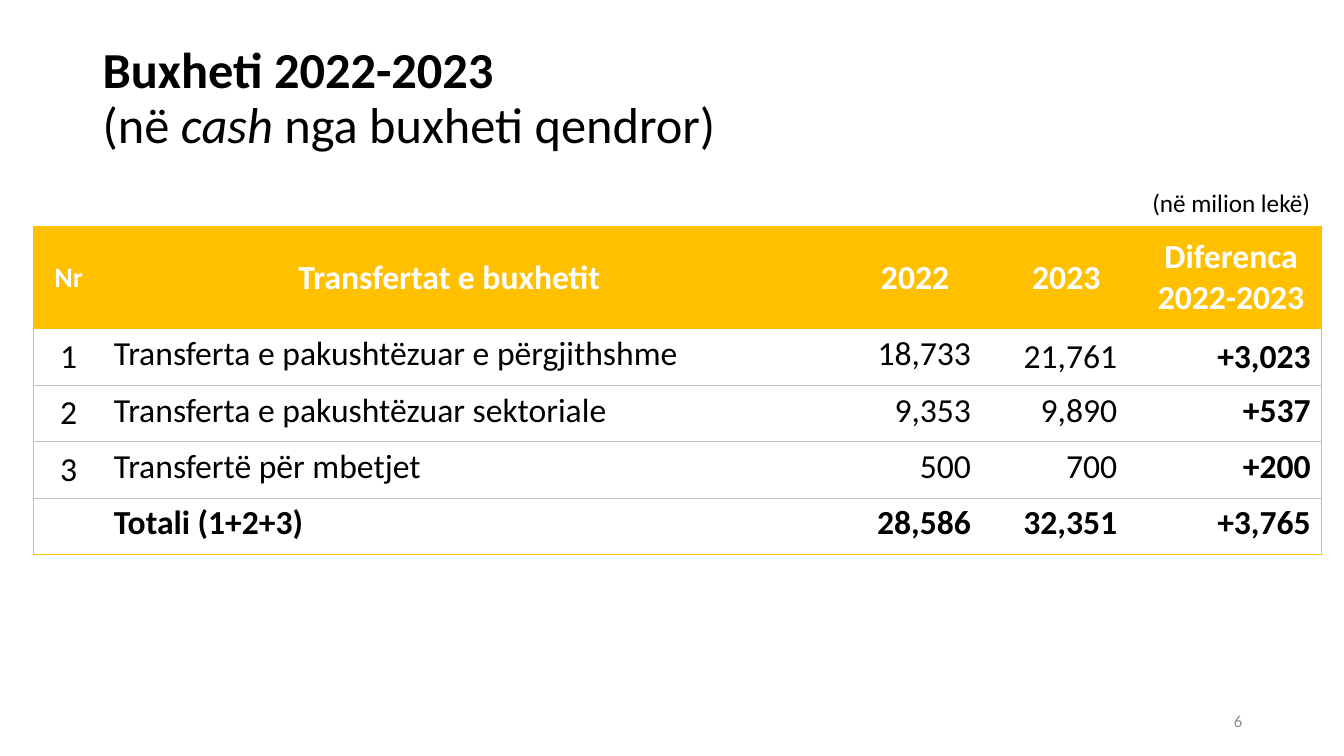
from lxml.etree import SubElement
from pptx import Presentation
from pptx.dml.color import RGBColor
from pptx.enum.text import MSO_ANCHOR, PP_ALIGN
from pptx.oxml.ns import qn
from pptx.util import Inches, Pt

GOLD, GREY, WHITE, BLACK = "FFC000", "BFBFBF", "FFFFFF", "000000"
LEFT, MID, RIGHT = PP_ALIGN.LEFT, PP_ALIGN.CENTER, PP_ALIGN.RIGHT
TOP, CENTER = MSO_ANCHOR.TOP, MSO_ANCHOR.MIDDLE


def tint(code):
    """Turn a hex string into a colour."""
    return RGBColor.from_string(code)


def put(item, values):
    """Set each value of a dict on an object."""
    for name, value in values.items():
        setattr(item, name, value)


class Deck:
    """Holds the style and the slide; lengths are percent of the slide size."""

    def __init__(self, wide, high, face):
        """Open a blank slide of the given size."""
        self.show = Presentation()
        put(self.show, {"slide_width": Inches(wide), "slide_height": Inches(high)})
        self.face = face
        self.slide = self.show.slides.add_slide(self.show.slide_layouts[6])

    def across(self, share):
        """Give a share of the slide width."""
        return round(self.show.slide_width * share / 100)

    def down(self, share):
        """Give a share of the slide height."""
        return round(self.show.slide_height * share / 100)

    def place(self, left, top, width, height):
        """Turn four shares into a position and a size."""
        return self.across(left), self.down(top), self.across(width), self.down(height)

    def letter(self, frame, lines, size, color=BLACK, align=LEFT, bold=False, space=None):
        """Fill a text frame with lines of (text, format) runs."""
        for spot, line in enumerate(lines):
            para = frame.add_paragraph() if spot else frame.paragraphs[0]
            put(para, {"alignment": align, "line_spacing": space})
            for text, extra in line:
                run = para.add_run()
                run.text = text
                look = {"name": self.face, "size": Pt(size), "bold": bold}
                put(run.font, look | extra)
                run.font.color.rgb = tint(color)

    def label(self, area, lines, size, frame=None, **style):
        """Add a text box."""
        box = self.slide.shapes.add_textbox(*self.place(*area)).text_frame
        put(box, {"word_wrap": True, "vertical_anchor": CENTER} | (frame or {}))
        self.letter(box, lines, size, **style)

    def edge(self, cell, sides):
        """Draw the borders of a cell, or clear those without a colour."""
        props = cell._tc.get_or_add_tcPr()
        for side in "LRTB":
            line = SubElement(props, qn(f"a:ln{side}"), w=str(Pt(0.5)))
            color = sides.get(side)
            fill = SubElement(line, qn("a:solidFill" if color else "a:noFill"))
            if color:
                SubElement(fill, qn("a:srgbClr"), val=color)

    def table(self, area, cols, rows):
        """Add a plain table with the given column and row shares."""
        grid = self.slide.shapes.add_table(len(rows), len(cols), *self.place(*area)).table
        put(grid, {"first_row": False, "horz_banding": False})
        for col, share in zip(grid.columns, cols):
            col.width = self.across(share)
        for row, share in zip(grid.rows, rows):
            row.height = self.down(share)
        return grid

    def cell(self, cell, lines, size, fill, sides, frame, **style):
        """Fill and edge one table cell."""
        self.edge(cell, sides)
        cell.fill.solid()
        cell.fill.fore_color.rgb = tint(fill)
        put(cell, frame)
        self.letter(cell.text_frame, lines, size, **style)


HEAD = [
    (["Nr"], 20, {}),
    (["Transfertat e buxhetit"], 24, {"margin_right": Inches(0.26)}),
    (["2022"], 24, {"margin_left": Inches(0.48)}),
    (["2023"], 24, {"margin_left": Inches(0.34)}),
    (["Diferenca", "2022-2023"], 24, {"margin_left": Inches(0.24)}),
]
BODY = [
    ("1", "Transferta e pakushtëzuar e përgjithshme", "18,733", "21,761", "+3,023"),
    ("2", "Transferta e pakushtëzuar sektoriale", "9,353", "9,890", "+537"),
    ("3", "Transfertë për mbetjet", "500", "700", "+200"),
    ("", "Totali (1+2+3)", "28,586", "32,351", "+3,765"),
]
ALIGN = [MID, LEFT, RIGHT, RIGHT, RIGHT]


def main():
    """Build the budget slide."""
    deck = Deck(13.33, 7.5, "Calibri")
    title = [
        [("Buxheti 2022-2023", {"bold": True})],
        [("(në ", {}), ("cash", {"italic": True}), (" nga buxheti qendror)", {})],
    ]
    deck.label((6.9, 5.33, 86.27, 19.33), title, 36,
               {"margin_bottom": Inches(0.32)}, space=0.9)

    grid = deck.table((2.48, 30, 95.8, 43.33), [5.25, 52.59, 12.68, 10.88, 14.4],
                      [13.47] + [7.47] * 4)
    last = len(HEAD) - 1
    for col, (lines, size, frame) in enumerate(HEAD):
        sides = {"T": GOLD, "B": GOLD}
        if col == 0:
            sides["L"] = GOLD
        if col == last:
            sides["R"] = GOLD
        deck.cell(grid.cell(0, col), [[(line, {})] for line in lines], size, GOLD, sides,
                  {"vertical_anchor": CENTER} | frame, color=WHITE, align=MID, bold=True)
    for row, texts in enumerate(BODY, 1):
        total = row == len(BODY)
        for col, text in enumerate(texts):
            sides = {"T": GOLD if row == 1 else GREY, "B": GOLD if total else GREY}
            if col == 0:
                sides["L"] = GREY
            if col == last:
                sides["R"] = GREY
            mid = col == 0 or (row == 1 and col > 2)
            deck.cell(grid.cell(row, col), [[(text, {})]], 24, WHITE, sides,
                      {"vertical_anchor": CENTER if mid else TOP},
                      align=ALIGN[col], bold=total or col == last)

    deck.label((70.67, 92.67, 22.5, 5.33), [[("6", {})]], 12, color="8C8C8C", align=RIGHT)
    deck.label((85, 24.13, 13.43, 5.33), [[("(në milion lekë)", {})]], 18,
               {"word_wrap": False, "vertical_anchor": TOP})
    deck.show.save("out.pptx")


if __name__ == "__main__":
    main()
